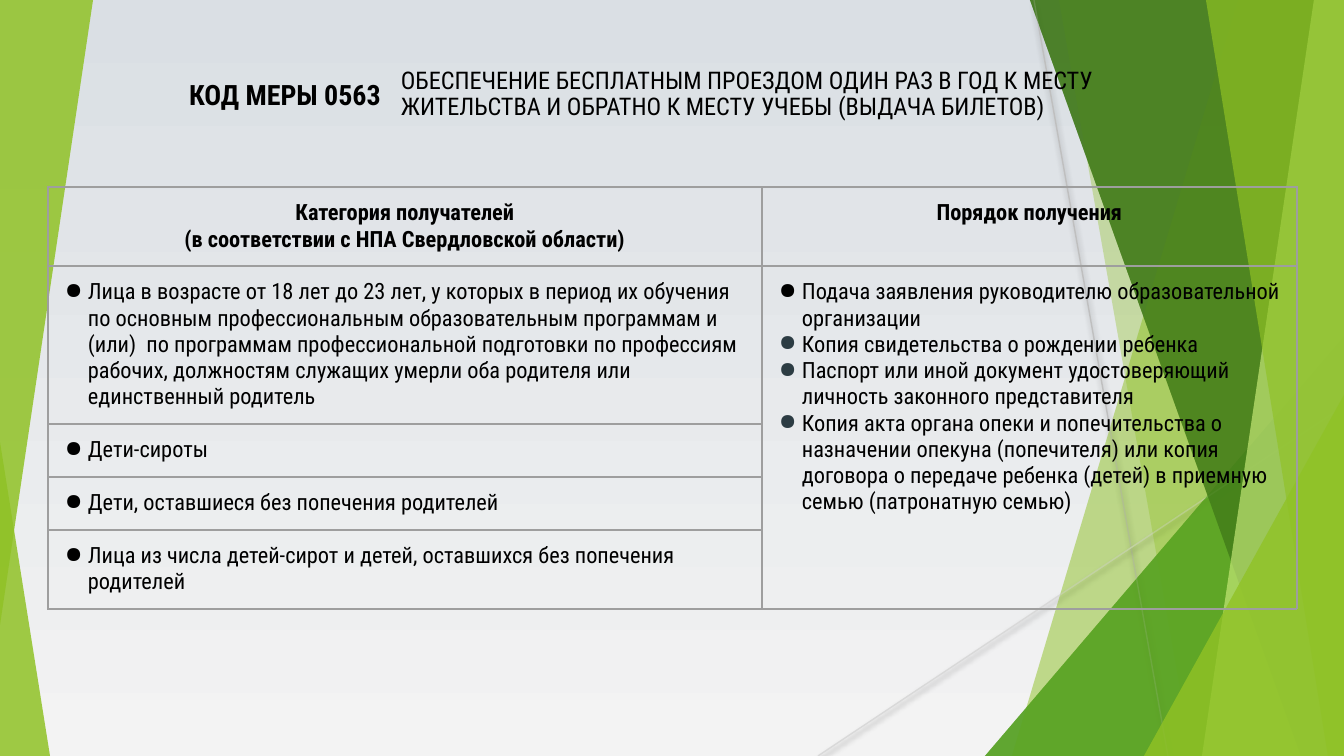
from lxml.etree import SubElement
from pptx import Presentation
from pptx.dml.color import RGBColor
from pptx.enum.shapes import MSO_CONNECTOR, MSO_SHAPE
from pptx.enum.text import MSO_ANCHOR, MSO_AUTO_SIZE, PP_ALIGN
from pptx.oxml.ns import qn
from pptx.util import Pt

# Content
TITLE = ("ОБЕСПЕЧЕНИЕ БЕСПЛАТНЫМ ПРОЕЗДОМ ОДИН РАЗ В ГОД К МЕСТУ ЖИТЕЛЬСТВА "
         "И ОБРАТНО К МЕСТУ УЧЕБЫ (ВЫДАЧА БИЛЕТОВ)")
CODE = "КОД МЕРЫ 0563"
HEADERS = [
    ["Категория получателей", "(в соответствии с НПА Свердловской области)"],
    ["Порядок получения"],
]
RECIPIENTS = [
    "Лица в возрасте от 18 лет до 23 лет, у которых в период их обучения по основным "
    "профессиональным образовательным программам и (или)  по программам профессиональной "
    "подготовки по профессиям рабочих, должностям служащих умерли оба родителя или "
    "единственный родитель",
    "Дети-сироты",
    "Дети, оставшиеся без попечения родителей",
    "Лица из числа детей-сирот и детей, оставшихся без попечения родителей",
]
STEPS = [
    "Подача заявления руководителю образовательной организации",
    "Копия свидетельства о рождении ребенка",
    "Паспорт или иной документ удостоверяющий личность законного представителя",
    "Копия акта органа опеки и попечительства о назначении опекуна (попечителя) или копия "
    "договора о передаче ребенка (детей) в приемную семью (патронатную семью)",
]

THEME = {
    "font": "Roboto Condensed", "title": 13, "code": 15, "cell": 12,
    "text": "000000", "bullet": "2C3C43", "border": "9E9E9E",
    "bg": ("DADFE4", "F3F3F3"),
    "lime": "90C226", "green": "54A021", "dark": "3F7819", "pale": "C0E474",
}

# Geometry in px
W, H = 1344, 756
SCALE = 914400 / 134.4
COLS = [714, 535]
ROWS = [79, 158, 53, 53, 79]
PAD = 13
# Right-hand bands: top x, bottom x, colour, opacity %; triangles: box, apex, turn
WINGS = [
    (1238, 1012, "lime", 30),
    (1059, 1192, "lime", 20),
    ((985, 336, 359, 420), 1, 0, "green", 72),
    (1030, 1301, "dark", 70),
    (1314, 1202, "pale", 70),
    (1206, 1328, "lime", 65),
    ((1144, 395, 200, 361), 1, 0, "lime", 80),
]
LOWER_LEFT = ((0, 442, 50, 314), 0, 0, "lime", 85)
UPPER_LEFT = ((0, 0, 93, 625), 1, 180, "lime", 85)
RAYS = [((1034, 0), (1168, H), "BFBFBF"), ((W, 406), (818, H), "D9D9D9")]


def px(*values):
    return [round(v * SCALE) for v in values]


def rgb(name):
    return RGBColor.from_string(THEME.get(name, name))


def paint(s, color, opacity):
    s.shadow.inherit = False
    s.fill.solid()
    s.fill.fore_color.rgb = rgb(color)
    clr = s._element.spPr.find(".//" + qn("a:srgbClr"))
    SubElement(clr, qn("a:alpha"), val=str(opacity * 1000))
    s.line.fill.background()


def add_facet(shapes, facet):
    if len(facet) == 4:
        top, bottom, color, opacity = facet
        fb = shapes.build_freeform(top, 0, SCALE)
        fb.add_line_segments([(W, 0), (W, H), (bottom, H)], close=True)
        s = fb.convert_to_shape()
    else:
        box, apex, turn, color, opacity = facet
        s = shapes.add_shape(MSO_SHAPE.ISOSCELES_TRIANGLE, *px(*box))
        s.adjustments[0] = apex
        s.rotation = turn
    paint(s, color, opacity)


def add_ray(shapes, start, end, color):
    s = shapes.add_connector(MSO_CONNECTOR.STRAIGHT, *px(*start, *end))
    s.line.color.rgb = rgb(color)
    s.line.width = Pt(0.75)
    effects = SubElement(s._element.spPr, qn("a:effectLst"))
    shadow = SubElement(effects, qn("a:outerShdw"), blurRad=str(Pt(3.1)),
                        dist=str(Pt(1.6)), dir="5400000", rotWithShape="0")
    clr = SubElement(shadow, qn("a:srgbClr"), val="000000")
    SubElement(clr, qn("a:alpha"), val="38000")


def write(tf, lines, size, bold=False, align=PP_ALIGN.LEFT):
    for i, line in enumerate(lines):
        p = tf.paragraphs[0] if i == 0 else tf.add_paragraph()
        p.alignment = align
        r = p.add_run()
        r.text = line
        fmt = {"name": THEME["font"], "size": Pt(THEME[size]), "bold": bold}
        for key, value in fmt.items():
            setattr(r.font, key, value)
        r.font.color.rgb = rgb("text")


def set_frame(tf, pad_x, pad_y):
    left, top = px(pad_x, pad_y)
    fmt = {"word_wrap": True, "auto_size": MSO_AUTO_SIZE.NONE,
           "vertical_anchor": MSO_ANCHOR.MIDDLE, "margin_left": left,
           "margin_right": left, "margin_top": top, "margin_bottom": top}
    for key, value in fmt.items():
        setattr(tf, key, value)


def add_bullets(tf, colors):
    margin, indent = px(27, -23)
    for p, color in zip(tf.paragraphs, colors):
        pPr = p._p.get_or_add_pPr()
        pPr.set("marL", str(margin))
        pPr.set("indent", str(indent))
        clr = SubElement(pPr, qn("a:buClr"))
        SubElement(clr, qn("a:srgbClr"), val=THEME[color])
        SubElement(pPr, qn("a:buChar"), char="●")


def format_cell(cell):
    pad, = px(PAD)
    for side in ("left", "right", "top", "bottom"):
        setattr(cell, "margin_" + side, pad)
    tcPr = cell._tc.get_or_add_tcPr()
    for tag in ("a:lnL", "a:lnR", "a:lnT", "a:lnB"):
        ln = SubElement(tcPr, qn(tag), w=str(Pt(0.75)))
        fill = SubElement(ln, qn("a:solidFill"))
        SubElement(fill, qn("a:srgbClr"), val=THEME["border"])
    cell.fill.background()


def add_benefit_table(shapes):
    frame = shapes.add_table(len(ROWS), len(COLS), *px(48, 187, sum(COLS), sum(ROWS)))
    table = frame.table
    table.first_row = table.horz_banding = False
    for col, width in zip(table.columns, COLS):
        col.width, = px(width)
    for row, height in zip(table.rows, ROWS):
        row.height, = px(height)
    for cell in table.iter_cells():
        format_cell(cell)
    table.cell(1, 1).merge(table.cell(len(ROWS) - 1, 1))
    for c, lines in enumerate(HEADERS):
        write(table.cell(0, c).text_frame, lines, "cell", True, PP_ALIGN.CENTER)
    for i, text in enumerate(RECIPIENTS, 1):
        tf = table.cell(i, 0).text_frame
        write(tf, [text], "cell")
        add_bullets(tf, ["text"])
    tf = table.cell(1, 1).text_frame
    write(tf, STEPS, "cell")
    add_bullets(tf, ["text"] + ["bullet"] * (len(STEPS) - 1))


def main():
    prs = Presentation()
    prs.slide_width, prs.slide_height = px(W, H)
    slide = prs.slides.add_slide(prs.slide_layouts[5])
    shapes = slide.shapes

    # Background
    fill = slide.background.fill
    fill.gradient()
    fill.gradient_angle = 270
    for stop, color in zip(fill.gradient_stops, THEME["bg"]):
        stop.color.rgb = rgb(color)

    # Facets: two overlaid layers, with the rays between them
    for facet in WINGS + [LOWER_LEFT]:
        add_facet(shapes, facet)
    for ray in RAYS:
        add_ray(shapes, *ray)
    for facet in WINGS + [UPPER_LEFT]:
        add_facet(shapes, facet)

    # Title, brought in front of the facets
    title = shapes.title
    title.left, title.top, title.width, title.height = px(392, 43, 847, 103)
    set_frame(title.text_frame, 9, 5)
    write(title.text_frame, [TITLE], "title")
    title.text_frame.paragraphs[0].line_spacing = 0.9
    title._element.getparent().append(title._element)

    # Measure code
    label = shapes.add_textbox(*px(110, 43, 284, 103))
    set_frame(label.text_frame, PAD, PAD)
    write(label.text_frame, [CODE], "code", True, PP_ALIGN.RIGHT)

    add_benefit_table(shapes)
    prs.save("out.pptx")


if __name__ == "__main__":
    main()
